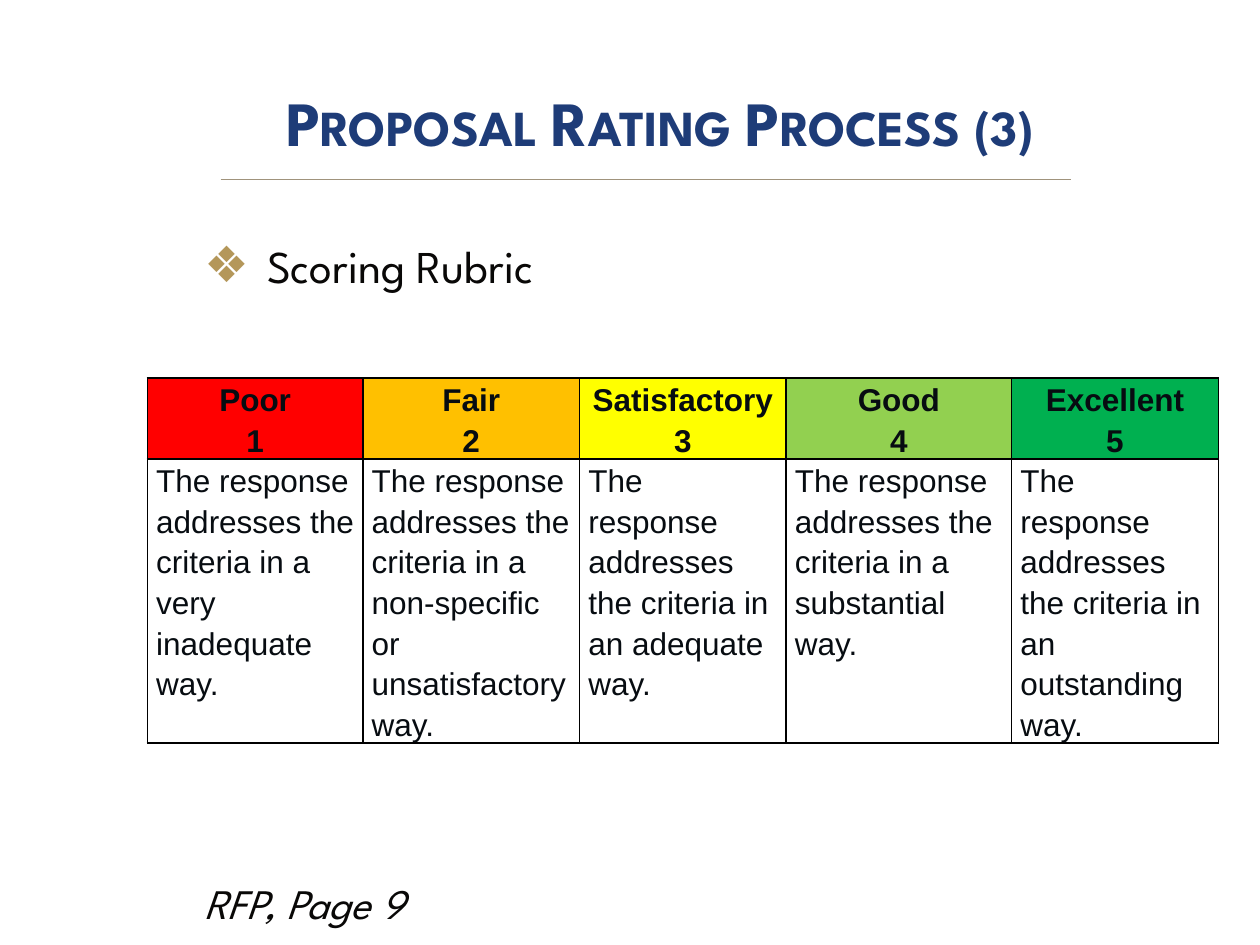
from collections import namedtuple

from lxml.etree import SubElement
from pptx import Presentation
from pptx.dml.color import RGBColor
from pptx.enum.shapes import MSO_CONNECTOR
from pptx.enum.text import MSO_ANCHOR, MSO_AUTO_SIZE, PP_ALIGN
from pptx.oxml.ns import qn
from pptx.util import Inches, Pt

WIDTH, HEIGHT = Inches(10), Inches(7.5)
COLORS = {
    "title": "1E3C78", "rule": "A0937C", "bullet": "B4975A", "text": "090807",
    "cell": "070C11", "border": "000000", "poor": "FF0000", "fair": "FFC000",
    "satisfactory": "FFFF00", "good": "92D050", "excellent": "00B050",
}
RATINGS = [
    ("Poor", "a very inadequate", 1.71),
    ("Fair", "a non-specific or unsatisfactory", 1.72),
    ("Satisfactory", "an adequate", 1.64),
    ("Good", "a substantial", 1.79),
    ("Excellent", "an outstanding", 1.64),
]
Box = namedtuple("Box", "left top width height")


def share_box(left, top, width, height):
    return Box(int(WIDTH * left), int(HEIGHT * top), int(WIDTH * width), int(HEIGHT * height))


def color(name):
    return RGBColor.from_string(COLORS[name])


def place(shape, box):
    shape.left, shape.top, shape.width, shape.height = box


def add_span(para, text, font, size, color_name, bold=False, italic=False):
    span = para.add_run()
    span.text = text
    span.font.name = font
    span.font.size = Pt(size)
    span.font.bold = bold
    span.font.italic = italic
    span.font.color.rgb = color(color_name)
    return span


def set_indent(para, margin, first_line):
    properties = para._p.get_or_add_pPr()
    properties.set("marL", str(Inches(margin)))
    properties.set("indent", str(Inches(first_line)))
    return properties


def add_bullet(para, symbol, color_name, percent):
    properties = set_indent(para, 0.5, -0.5)
    bullet_color = SubElement(properties, qn("a:buClr"))
    SubElement(bullet_color, qn("a:srgbClr"), val=COLORS[color_name])
    SubElement(properties, qn("a:buSzPct"), val=str(percent * 1000))
    SubElement(properties, qn("a:buChar"), char=symbol)


def build_title(page, box):
    title = page.shapes.title
    place(title, box)
    frame = title.text_frame
    frame.auto_size = MSO_AUTO_SIZE.NONE
    frame.vertical_anchor = MSO_ANCHOR.MIDDLE
    frame.margin_top = frame.margin_bottom = 0
    para = frame.paragraphs[0]
    set_indent(para, 0.44, 0)
    para.alignment = PP_ALIGN.CENTER
    span = add_span(para, "Proposal Rating Process (3)", "League Spartan", 36, "title", bold=True)
    span.font._element.set("cap", "small")


def build_rule(page, box):
    rule = page.shapes.add_connector(
        MSO_CONNECTOR.STRAIGHT, box.left, box.top, box.left + box.width, box.top + box.height
    )
    rule.line.color.rgb = color("rule")
    rule.line.width = Pt(0.75)
    SubElement(rule._element.spPr, qn("a:effectLst"))


def build_body(page, box):
    body = page.placeholders[1]
    place(body, box)
    frame = body.text_frame
    frame.auto_size = MSO_AUTO_SIZE.NONE
    frame.vertical_anchor = MSO_ANCHOR.TOP
    frame.margin_top = Inches(0.22)
    heading = frame.paragraphs[0]
    add_bullet(heading, "❖", "bullet", 110)
    heading.space_before = Pt(0)
    add_span(heading, "Scoring Rubric", "League Spartan", 26, "text")
    reference = frame.add_paragraph()
    SubElement(set_indent(reference, 0, 0), qn("a:buNone"))
    reference.space_before = Pt(334)
    add_span(reference, "RFP, Page 9", "League Spartan", 24, "text", italic=True)


def add_borders(cell):
    properties = cell._tc.get_or_add_tcPr()
    for side in ("lnL", "lnR", "lnT", "lnB"):
        line = SubElement(properties, qn(f"a:{side}"), w=str(Pt(1)))
        fill = SubElement(line, qn("a:solidFill"))
        SubElement(fill, qn("a:srgbClr"), val=COLORS["border"])


def fill_cell(cell, lines, alignment, bold, fill_name=None):
    add_borders(cell)
    if fill_name:
        cell.fill.solid()
        cell.fill.fore_color.rgb = color(fill_name)
    else:
        cell.fill.background()
    cell.margin_left = cell.margin_right = Inches(0.07)
    cell.margin_top = cell.margin_bottom = 0
    frame = cell.text_frame
    for index, text in enumerate(lines):
        para = frame.add_paragraph() if index else frame.paragraphs[0]
        para.alignment = alignment
        para.line_spacing = 1.15
        add_span(para, text, "Arial", 18, "cell", bold=bold)


def build_rubric(page, box):
    table = page.shapes.add_table(2, len(RATINGS), *box).table
    table.first_row = table.horz_banding = False
    table.rows[0].height = int(box.height * 0.23)
    table.rows[1].height = box.height - table.rows[0].height
    total = sum(weight for _, _, weight in RATINGS)
    for column, (name, quality, weight) in enumerate(RATINGS):
        table.columns[column].width = int(box.width * weight / total)
        fill_cell(table.cell(0, column), [name, str(column + 1)], PP_ALIGN.CENTER, True, name.lower())
        sentence = f"The response addresses the criteria in {quality} way."
        fill_cell(table.cell(1, column), [sentence], PP_ALIGN.LEFT, False)


def main():
    deck = Presentation()
    deck.slide_width, deck.slide_height = WIDTH, HEIGHT
    page = deck.slides.add_slide(deck.slide_layouts[1])
    build_body(page, share_box(0.152, 0.223, 0.8, 0.735))
    build_title(page, share_box(0.052, 0.067, 0.9, 0.123))
    build_rule(page, share_box(0.175, 0.19, 0.675, 0))
    build_rubric(page, share_box(0.117, 0.4, 0.85, 0.367))
    deck.save("out.pptx")


if __name__ == "__main__":
    main()
